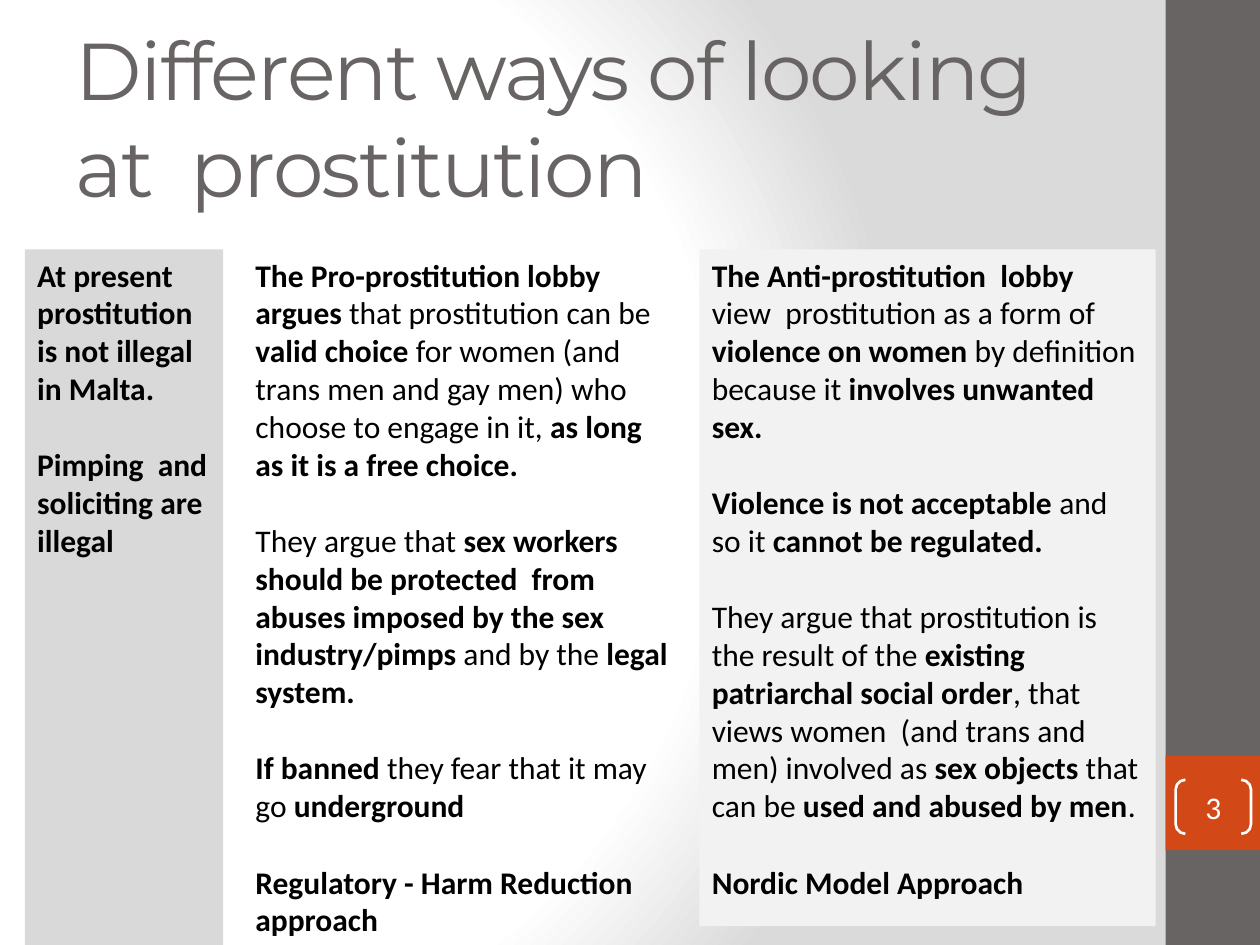
from dataclasses import dataclass

from pptx import Presentation
from pptx.dml.color import RGBColor
from pptx.enum.shapes import MSO_SHAPE
from pptx.enum.text import MSO_ANCHOR, MSO_AUTO_SIZE, PP_ALIGN
from pptx.oxml import parse_xml
from pptx.oxml.ns import nsdecls, qn
from pptx.util import Cm, Pt

RECT, PAIR = MSO_SHAPE.RECTANGLE, MSO_SHAPE.DOUBLE_BRACKET
TOP, MIDDLE = MSO_ANCHOR.TOP, MSO_ANCHOR.MIDDLE
LEFT, CENTER = PP_ALIGN.LEFT, PP_ALIGN.CENTER
FIXED = MSO_AUTO_SIZE.NONE


@dataclass(frozen=True)
class Theme:
    head: str = "Montserrat"
    body: str = "Calibri"
    big: int = 46
    small: int = 18
    gap: int = 22
    ink: str = "000000"
    white: str = "FFFFFF"
    grey: str = "696464"
    accent: str = "D34817"
    pale: str = "F2F2F2"
    mid: str = "D9D9D9"
    edge: str = "DADADA"


class Deck:
    def __init__(self, theme):
        self.theme = theme
        self.file = Presentation()
        self.file.slide_width, self.file.slide_height = Cm(25.4), Cm(19.05)
        self.slide = self.file.slides.add_slide(self.file.slide_layouts[5])

    def backdrop(self, stops, focus):
        """Fill the background with a round gradient."""
        marks = "".join(f'<a:gs pos="{pos * 1000}"><a:srgbClr val="{color}"/></a:gs>'
                        for pos, color in stops)
        sides = " ".join(f'{side}="{part * 1000}"' for side, part in zip("ltrb", focus))
        fill = parse_xml(
            f'<a:gradFill {nsdecls("a")} rotWithShape="1"><a:gsLst>{marks}</a:gsLst>'
            f'<a:path path="circle"><a:fillToRect {sides}/></a:path></a:gradFill>')
        self.slide.background.fill.solid()
        props = self.slide.element.find(".//" + qn("p:bgPr"))
        props[0] = fill

    def put(self, shape, paras, size, font, color, align=LEFT, anchor=TOP, **extra):
        """Set text; parts between asterisks are bold."""
        frame = shape.text_frame
        form = {"word_wrap": True, "auto_size": FIXED, "vertical_anchor": anchor, **extra}
        for name, value in form.items():
            setattr(frame, name, value)
        for i, text in enumerate(paras):
            para = frame.add_paragraph() if i else frame.paragraphs[0]
            para.alignment = align
            para.space_before = Pt(self.theme.gap if i else 0)
            for j, part in enumerate(text.split("*")):
                if not part:
                    continue
                run = para.add_run()
                run.text = part
                look = {"size": Pt(size), "name": font, "bold": j % 2 == 1}
                for name, value in look.items():
                    setattr(run.font, name, value)
                run.font.color.rgb = RGBColor.from_string(color)

    def title(self, text, box):
        shape = self.slide.shapes.title
        shape.left, shape.top, shape.width, shape.height = map(Cm, box)
        style = self.theme
        self.put(shape, [text], style.big, style.head, style.grey, anchor=MIDDLE)
        for props in shape.element.iter(qn("a:rPr")):
            props.set("spc", "-100")

    def block(self, box, fill):
        shape = self.slide.shapes.add_shape(RECT, *map(Cm, box))
        shape.shadow.inherit = False
        shape.fill.solid()
        shape.fill.fore_color.rgb = RGBColor.from_string(fill)
        shape.line.fill.background()
        return shape

    def column(self, box, paras, fill=None):
        shape = self.block(box, fill) if fill else self.slide.shapes.add_textbox(*map(Cm, box))
        self.put(shape, paras, self.theme.small, self.theme.body, self.theme.ink)

    def number(self, text, box):
        shape = self.slide.shapes.add_shape(PAIR, *map(Cm, box))
        shape.shadow.inherit = False
        shape.adjustments[0] = 0.18
        shape.fill.background()
        shape.line.color.rgb = RGBColor.from_string(self.theme.white)
        shape.line.width = Pt(1.5)
        edges = {f"margin_{side}": 0 for side in ("left", "right", "top", "bottom")}
        self.put(shape, [text], self.theme.small, self.theme.body, self.theme.white,
                 CENTER, MIDDLE, **edges)


STATUS = [
    "*At present prostitution is not illegal in Malta.*",
    "*Pimping  and soliciting are illegal*",
]
PRO = [
    "*The Pro-prostitution lobby  argues* that prostitution can be *valid choice *"
    "for women (and  trans men and gay men) who choose to engage in it, "
    "*as long as it is a free choice.*",
    "They argue that *sex workers  should be protected  from abuses imposed by the "
    "sex industry/pimps *and by the *legal system.*",
    "*If banned *they fear that it may go *underground*",
    "*Regulatory - Harm Reduction approach*",
]
ANTI = [
    "*The Anti-prostitution  lobby * view  prostitution as a form of "
    "*violence on women *by definition because it *involves unwanted sex.*",
    "*Violence is not acceptable *and  so it *cannot be regulated.*",
    "They argue that prostitution is the result of the *existing patriarchal social "
    "order*, that views women  (and trans and men) involved as *sex objects *that "
    "can be *used and abused by men*.",
    "*Nordic Model Approach*",
]


def main():
    theme = Theme()
    deck = Deck(theme)
    deck.backdrop([(0, theme.white), (75, theme.white), (100, theme.edge)],
                  (20, 50, 100, 50))

    # Side bar with the page number
    side, wide = 23.5, 1.9
    deck.block((side, 0, wide, 19.05), theme.grey)
    deck.block((side, 15.24, wide, wide), theme.accent)
    deck.number("3", (23.7, 15.72, 1.52, 1.09))

    # Title
    deck.title("Different ways of looking at  prostitution", (1.27, 0.76, 21.16, 3.18))

    # Three columns
    top, tall = 5.03, 14.02
    deck.column((4.9, top, 9, tall), PRO)
    deck.column((14.1, top, 9.2, 13.64), ANTI, theme.pale)
    deck.column((0.5, top, 4, tall), STATUS, theme.mid)

    deck.file.save("out.pptx")


if __name__ == "__main__":
    main()
